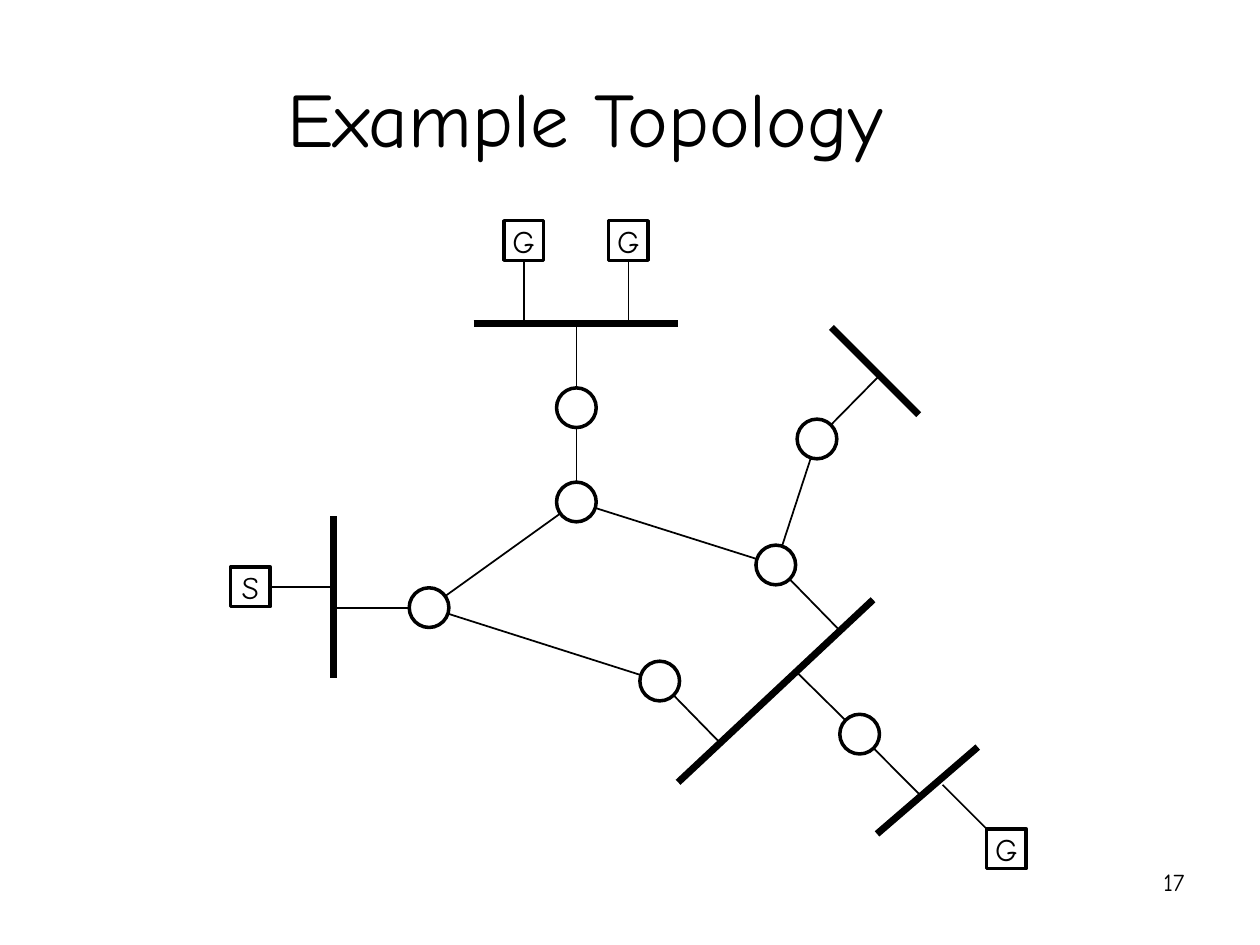
from lxml.etree import SubElement
from pptx import Presentation
from pptx.dml.color import RGBColor
from pptx.enum.shapes import MSO_CONNECTOR, MSO_SHAPE
from pptx.enum.text import MSO_ANCHOR, PP_ALIGN
from pptx.oxml.ns import qn
from pptx.util import Cm, Pt

BLACK = RGBColor(0, 0, 0)
WHITE = RGBColor(255, 255, 255)
FONT = "Comic Neue"
NODE_SIZE = 0.8

prs = Presentation()
prs.slide_width, prs.slide_height = Cm(25.4), Cm(19.05)
slide = prs.slides.add_slide(prs.slide_layouts[5])


def write(frame, text, size, align):
    """Fill a text frame with one formatted paragraph."""
    frame.text = text
    paragraph = frame.paragraphs[0]
    paragraph.alignment = align
    font = paragraph.runs[0].font
    font.name, font.size = FONT, Pt(size)
    font.color.rgb = BLACK


def draw_line(start, end, width):
    """Draw a black line between two points given in centimetres."""
    line = slide.shapes.add_connector(
        MSO_CONNECTOR.STRAIGHT, *[Cm(value) for value in (*start, *end)])
    line.line.color.rgb = BLACK
    line.line.width = Pt(width)
    SubElement(line._element.spPr, qn("a:effectLst"))
    return line


title = slide.shapes.title
title.left, title.top, title.width, title.height = Cm(1.27), Cm(1.19), Cm(21.06), Cm(2.34)
write(title.text_frame, "Example Topology", 44, PP_ALIGN.CENTER)
title.text_frame.vertical_anchor = MSO_ANCHOR.MIDDLE

page_number = slide.shapes.add_textbox(Cm(18.21), Cm(17.35), Cm(5.92), Cm(1.32))
page_number.text_frame.word_wrap = True
write(page_number.text_frame, "17", 14, PP_ALIGN.RIGHT)

# Router centres
routers = {
    "north": (11.62, 8.22),
    "hub": (11.62, 10.12),
    "west": (8.65, 12.25),
    "east": (15.64, 11.39),
    "northeast": (16.47, 8.85),
    "south": (13.3, 13.73),
    "southeast": (17.33, 14.8),
}
router_links = [("north", "hub"), ("hub", "west"), ("hub", "east"),
                ("west", "south"), ("east", "northeast")]
# Router and the point where it meets a network
network_links = [
    ("north", (11.62, 6.55)),
    ("west", (6.73, 12.25)),
    ("northeast", (17.73, 7.57)),
    ("east", (16.89, 12.67)),
    ("south", (14.55, 15.01)),
    ("southeast", (16.05, 13.54)),
    ("southeast", (18.57, 16.05)),
]
networks = [
    ((9.55, 6.53), (13.67, 6.53)),
    ((6.73, 10.41), (6.73, 13.67)),
    ((16.76, 6.6), (18.52, 8.36)),
    ((17.6, 12.09), (13.67, 15.77)),
    ((19.71, 15.06), (17.68, 16.81)),
]
# Label, top left corner, network point, joined side (None: the corner)
hosts = [
    ("G", (10.16, 4.45), (10.56, 6.55), 2),
    ("G", (12.27, 4.45), (12.67, 6.55), 2),
    ("S", (4.65, 11.43), (6.76, 11.83), 3),
    ("G", (19.89, 16.71), (19, 15.82), None),
]

for first, second in router_links:
    draw_line(routers[first], routers[second], 1)
for router, point in network_links:
    draw_line(routers[router], point, 1)
for start, end in networks:
    draw_line(start, end, 4)

for x, y in routers.values():
    circle = slide.shapes.add_shape(
        MSO_SHAPE.OVAL, Cm(x - NODE_SIZE / 2), Cm(y - NODE_SIZE / 2),
        Cm(NODE_SIZE), Cm(NODE_SIZE))
    circle.shadow.inherit = False
    circle.fill.solid()
    circle.fill.fore_color.rgb = WHITE
    circle.line.color.rgb = BLACK
    circle.line.width = Pt(2)

for label, corner, point, side in hosts:
    host = slide.shapes.add_shape(
        MSO_SHAPE.RECTANGLE, Cm(corner[0]), Cm(corner[1]), Cm(NODE_SIZE), Cm(NODE_SIZE))
    host.shadow.inherit = False
    if label == "S":
        host.fill.solid()
        host.fill.fore_color.rgb = WHITE
    else:
        host.fill.background()
    host.line.color.rgb = BLACK
    host.line.width = Pt(2)
    host.text_frame.word_wrap = False
    host.text_frame.vertical_anchor = MSO_ANCHOR.MIDDLE
    write(host.text_frame, label, 18, PP_ALIGN.CENTER)
    host_link = draw_line(corner, point, 1)
    if side is not None:
        host_link.begin_connect(host, side)

prs.save("out.pptx")
